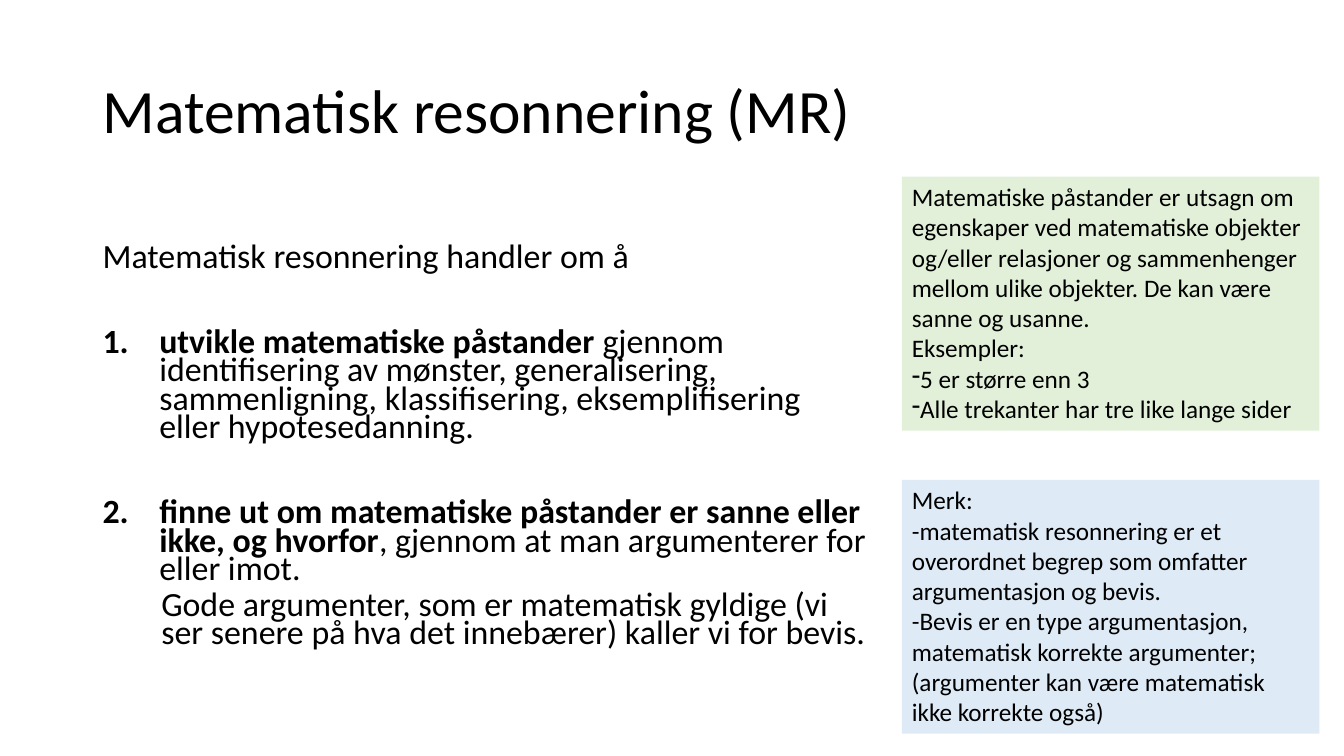
from lxml.etree import SubElement
from pptx import Presentation
from pptx.dml.color import RGBColor
from pptx.enum.shapes import MSO_SHAPE
from pptx.enum.text import MSO_ANCHOR, MSO_AUTO_SIZE, PP_ALIGN
from pptx.oxml.ns import qn
from pptx.util import Cm, Pt

BULLETS = {
    "none": ("a:buNone", {}),
    "number": ("a:buAutoNum", {"type": "arabicPeriod"}),
    "dash": ("a:buChar", {"char": "-"}),
}


def paint(target, color):
    target.solid()
    target.fore_color.rgb = RGBColor.from_string(color)


def apply(target, values):
    for name, value in values.items():
        setattr(target, name, value)


class SlideBuilder:
    font = "Calibri"
    ink = "000000"

    def __init__(self, deck):
        self.slide = deck.slides.add_slide(deck.slide_layouts[1])

    def place(self, shape, box):
        apply(shape, dict(zip(("left", "top", "width", "height"), map(Cm, box))))

    def set_paragraph(self, paragraph, runs, size, bullet="none", left=0, hanging=0, **layout):
        apply(paragraph, {"alignment": PP_ALIGN.LEFT, "space_before": Pt(0), **layout})
        properties = paragraph._p.get_or_add_pPr()
        properties.set("marL", str(int(Cm(left))))
        properties.set("indent", str(-int(Cm(hanging))))
        tag, attributes = BULLETS[bullet]
        SubElement(properties, qn(tag), attributes)
        for words, bold in runs:
            run = paragraph.add_run()
            run.text = words
            apply(run.font, {"name": self.font, "size": Pt(size), "bold": bold})
            paint(run.font.fill, self.ink)

    def fill_frame(self, frame, paragraphs, size, **frame_format):
        apply(frame, {"word_wrap": True, **frame_format})
        for index, (runs, layout) in enumerate(paragraphs):
            paragraph = frame.add_paragraph() if index else frame.paragraphs[0]
            self.set_paragraph(paragraph, runs, size, **layout)

    def title(self, words, box):
        heading = self.slide.shapes.title
        self.place(heading, box)
        self.fill_frame(heading.text_frame, [([(words, False)], {"line_spacing": 0.9})], 44,
                        vertical_anchor=MSO_ANCHOR.MIDDLE, auto_size=MSO_AUTO_SIZE.NONE)

    def body(self, paragraphs, box):
        content = self.slide.placeholders[1]
        self.place(content, box)
        self.fill_frame(content.text_frame, paragraphs, 24.2, margin_top=Cm(1.1),
                        vertical_anchor=MSO_ANCHOR.TOP, auto_size=MSO_AUTO_SIZE.NONE)

    def note(self, paragraphs, box, color):
        panel = self.slide.shapes.add_shape(MSO_SHAPE.RECTANGLE, *map(Cm, box))
        panel.shadow.inherit = False
        paint(panel.fill, color)
        panel.line.fill.background()
        self.fill_frame(panel.text_frame, paragraphs, 18, vertical_anchor=MSO_ANCHOR.TOP,
                        auto_size=MSO_AUTO_SIZE.SHAPE_TO_FIT_TEXT)


def plain(words, bullet="none"):
    return [(words, False)], {"bullet": bullet}


def main():
    deck = Presentation()
    apply(deck, {"slide_width": Cm(33.87), "slide_height": Cm(19.05)})
    builder = SlideBuilder(deck)

    builder.title("Matematisk resonnering (MR)", (2.33, 1.01, 29.21, 3.68))

    tight = {"line_spacing": 0.7}
    numbered = {**tight, "bullet": "number", "left": 1.43, "hanging": 1.43,
                "space_before": Pt(40.4)}
    builder.body([
        ([("Matematisk resonnering handler om å", False)], tight),
        ([("utvikle matematiske påstander ", True),
          ("gjennom identifisering av mønster, generalisering, sammenligning, "
           "klassifisering, eksemplifisering eller hypotesedanning.", False)], numbered),
        ([("finne ut om matematiske påstander er sanne eller ikke, og hvorfor", True),
          (", gjennom at man argumenterer for eller imot.", False)], numbered),
        ([("Gode argumenter, som er matematisk gyldige (vi ser senere på hva det "
           "innebærer) kaller vi for bevis.", False)],
         {**tight, "level": 1, "left": 1.48, "space_before": Pt(5)}),
    ], (2.33, 5.08, 19.79, 12.09))

    claims = [
        plain("Matematiske påstander er utsagn om egenskaper ved matematiske objekter "
              "og/eller relasjoner og sammenhenger mellom ulike objekter. "
              "De kan være sanne og usanne."),
        plain("Eksempler:"),
        plain("5 er større enn 3", "dash"),
        plain("Alle trekanter har tre like lange sider", "dash"),
    ]
    remarks = [
        plain("Merk:"),
        plain("-matematisk resonnering er et overordnet begrep som omfatter "
              "argumentasjon og bevis."),
        plain("-Bevis er en type argumentasjon, matematisk korrekte argumenter; "
              "(argumenter kan være matematisk ikke korrekte også)"),
    ]
    for paragraphs, top, color in ((claims, 4.45, "E2F0D9"), (remarks, 12.09, "DEEBF7")):
        builder.note(paragraphs, (22.73, top, 10.52, 6.4), color)

    deck.save("out.pptx")


if __name__ == "__main__":
    main()
